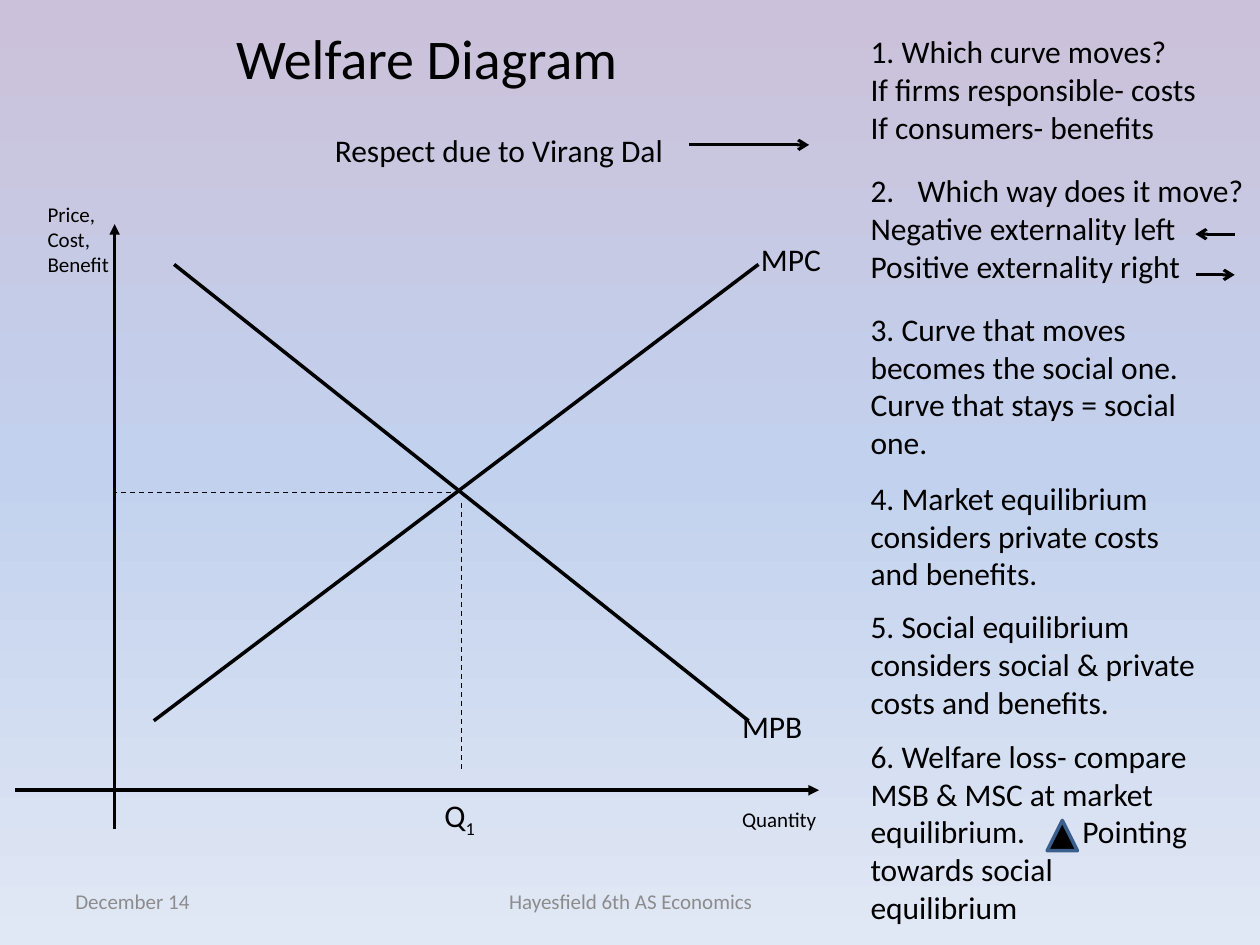
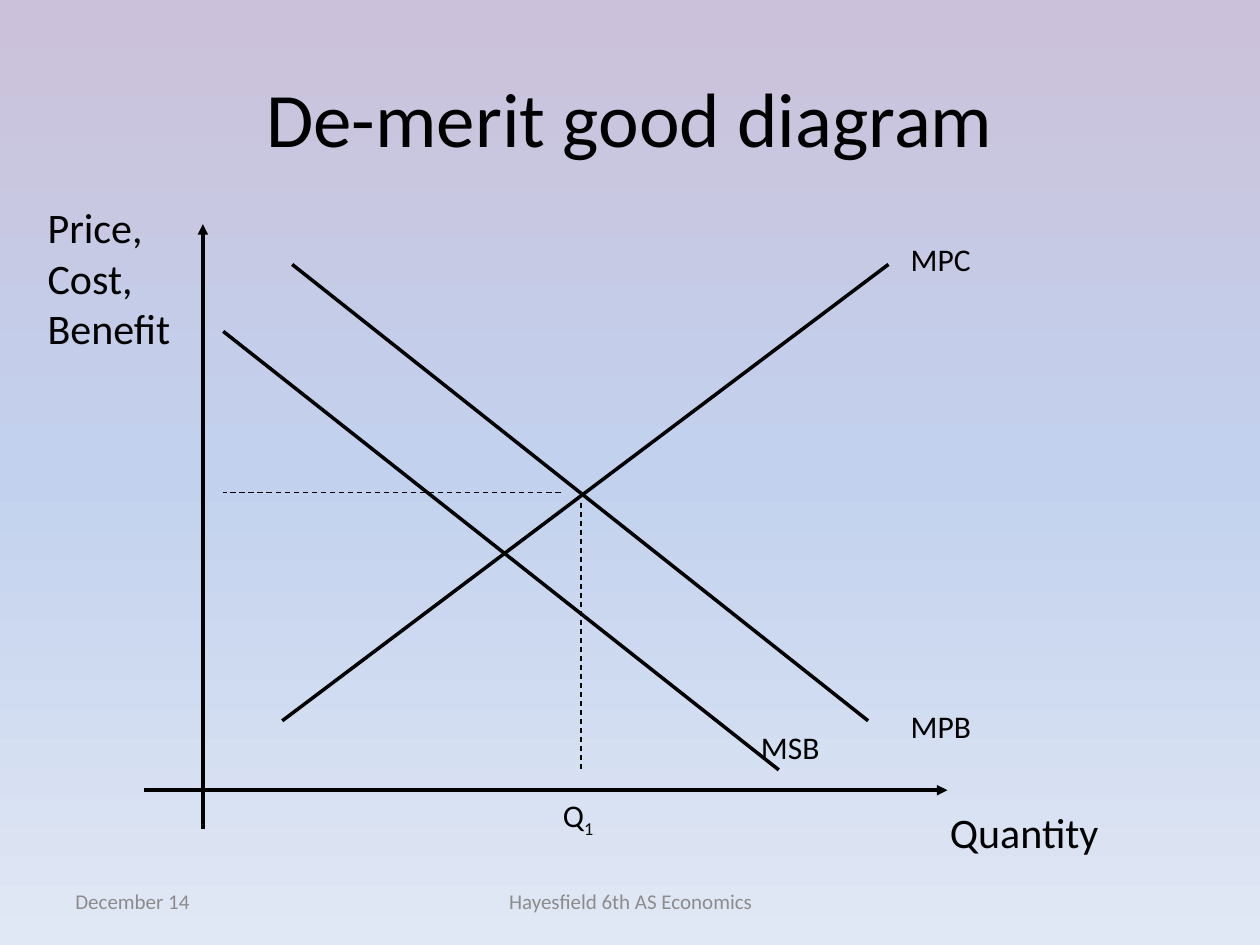
"""Builds two slides on externalities: a welfare diagram with steps and a de-merit good diagram."""
from copy import deepcopy
from dataclasses import dataclass

from lxml.etree import SubElement
from pptx import Presentation
from pptx.dml.color import RGBColor
from pptx.enum.dml import MSO_LINE_DASH_STYLE as Dash
from pptx.enum.shapes import MSO_CONNECTOR as Connector, MSO_SHAPE as Shape
from pptx.enum.text import MSO_ANCHOR as Anchor, MSO_AUTO_SIZE as AutoSize, PP_ALIGN as Align
from pptx.oxml.ns import qn
from pptx.util import Cm, Pt

COLOURS = {
    "ink": "000000",
    "footer": "8C8C8C",
    "triangle_edge": "3A5F8C",
    "sky_top": "CCC1DA",
    "sky_middle": "C2D1ED",
    "sky_bottom": "E1E8F5",
}
FONT = "Calibri"
TITLE_ONLY = 5
CURVE_TOP, CURVE_BOTTOM = 5.33, 14.53
PRICE_LEVEL, GUIDE_TOP, GUIDE_BOTTOM = 9.93, 10.13, 15.52
AXIS_TOP, AXIS_BOTTOM, QUANTITY_AXIS = 4.52, 16.71, 15.93
LABEL_WIDTH, LABEL_HEIGHT = 1.73, 1.02
STEP_LEFT, STEP_WIDTH = 17.3, 7.19

STEPS = [
    (0.53, 2.57, "1. Which curve moves?\nIf firms responsible- costs\nIf consumers- benefits"),
    (6.12, 3.33, "3. Curve that moves becomes the social one.\nCurve that stays = social one."),
    (9.53, 2.57, "4. Market equilibrium considers private costs and benefits."),
    (12.12, 2.57, "5. Social equilibrium considers social & private costs and benefits."),
]
DIRECTIONS = "Which way does it move?\nNegative externality left\nPositive externality right"
WELFARE_LOSS = ("6. Welfare loss- compare MSB & MSC at market equilibrium."
                "\tPointing towards social equilibrium")


@dataclass
class Market:
    """Horizontal places of one supply and demand diagram, in centimetres."""
    price_axis: float
    quantity_axis: tuple
    cost_curve: tuple
    benefit_curve: tuple
    quantity_guide: float
    price_guide: tuple
    cost_label: float
    benefit_label: float
    guide_label: float
    price_box: tuple
    quantity_box: tuple
    axis_size: int


WELFARE = Market(
    price_axis=2.31, quantity_axis=(0.3, 16.51),
    cost_curve=(3.1, 15.29), benefit_curve=(3.51, 15.09),
    quantity_guide=9.3, price_guide=(2.31, 9.09),
    cost_label=15.09, benefit_label=14.71, guide_label=8.71,
    price_box=(0.71, 3.94, 1.8, 1.8), quantity_box=(14.71, 16.13, 2.21, 0.79), axis_size=12)
DEMERIT = Market(
    price_axis=4.09, quantity_axis=(2.9, 19.1),
    cost_curve=(5.69, 17.91), benefit_curve=(5.89, 17.5),
    quantity_guide=11.71, price_guide=(4.5, 11.3),
    cost_label=18.11, benefit_label=18.11, guide_label=11.1,
    price_box=(0.71, 3.94, 3, 3.33), quantity_box=(18.9, 16.13, 3.81, 1.27), axis_size=24)


def colour(name):
    """Return the named colour."""
    return RGBColor.from_string(COLOURS[name])


def style_text(frame, size, ink="ink", align=Align.LEFT):
    """Give every run in a frame the same look."""
    for para in frame.paragraphs:
        para.alignment = align
        for span in para.runs:
            span.font.name = FONT
            span.font.size = Pt(size)
            span.font.color.rgb = colour(ink)


def add_text(page, place, text, size=18, wrap=True, ink="ink", align=Align.LEFT):
    """Add a text box at (left, top, width, height)."""
    box = page.shapes.add_textbox(*map(Cm, place))
    frame = box.text_frame
    frame.word_wrap = wrap
    frame.auto_size = AutoSize.SHAPE_TO_FIT_TEXT
    frame.text = text
    style_text(frame, size, ink, align)
    return box


def add_label(page, left, top, text, width=LABEL_WIDTH):
    """Add a short label on one line."""
    return add_text(page, (left, top, width, LABEL_HEIGHT), text, wrap=False)


def add_line(page, start, end, width=2.0, arrow=None, dashed=False):
    """Draw a straight line, with an arrowhead at its end if asked."""
    line = page.shapes.add_connector(Connector.STRAIGHT, *map(Cm, (*start, *end)))
    line.line.color.rgb = colour("ink")
    line.line.width = Pt(width)
    if dashed:
        line.line.dash_style = Dash.DASH
    if arrow:
        SubElement(line.line._get_or_add_ln(), qn("a:tailEnd"), type=arrow)
    SubElement(line._element.spPr, qn("a:effectLst"))


def add_title(page, text, place, size):
    """Fill and place the title."""
    title = page.shapes.title
    title.left, title.top, title.width, title.height = map(Cm, place)
    title.text_frame.text = text
    title.text_frame.vertical_anchor = Anchor.MIDDLE
    style_text(title.text_frame, size, align=Align.CENTER)


def add_footers(page):
    """Add the date and the course name at the foot."""
    footers = [(1.27, 5.92, "December 14", Align.LEFT),
               (8.69, 8.05, "Hayesfield 6th AS Economics", Align.CENTER)]
    for left, width, text, align in footers:
        box = add_text(page, (left, 17.65, width, 1.02), text, 12, ink="footer", align=align)
        box.text_frame.auto_size = AutoSize.NONE
        box.text_frame.vertical_anchor = Anchor.MIDDLE


def add_market(page, market):
    """Draw the axes, private curves, equilibrium guides and labels."""
    add_line(page, (market.price_axis, AXIS_BOTTOM), (market.price_axis, AXIS_TOP),
             arrow="triangle")
    axis_start, axis_end = market.quantity_axis
    add_line(page, (axis_start, QUANTITY_AXIS), (axis_end, QUANTITY_AXIS), arrow="triangle")
    add_text(page, market.price_box, "Price, Cost, Benefit", market.axis_size)
    add_text(page, market.quantity_box, "Quantity", market.axis_size)

    cost_start, cost_end = market.cost_curve
    add_line(page, (cost_start, CURVE_BOTTOM), (cost_end, CURVE_TOP))
    benefit_start, benefit_end = market.benefit_curve
    add_line(page, (benefit_start, CURVE_TOP), (benefit_end, CURVE_BOTTOM))
    add_label(page, market.cost_label, 4.72, "MPC")
    add_label(page, market.benefit_label, 14.12, "MPB")

    add_line(page, (market.quantity_guide, GUIDE_TOP), (market.quantity_guide, GUIDE_BOTTOM),
             0.75, dashed=True)
    guide_start, guide_end = market.price_guide
    add_line(page, (guide_end, PRICE_LEVEL), (guide_start, PRICE_LEVEL), 0.75, dashed=True)
    frame = add_label(page, market.guide_label, QUANTITY_AXIS, "Q", 1.17).text_frame
    subscript = frame.paragraphs[0].add_run()
    subscript.text = "1"
    style_text(frame, 18)
    subscript._r.get_or_add_rPr().set("baseline", "-25000")


def add_directions(page):
    """Add the second step, with its number and two direction arrows."""
    box = add_text(page, (STEP_LEFT, 3.33, 8.13, 3.33), DIRECTIONS, wrap=False)
    for para in box.text_frame.paragraphs:
        properties = para._p.get_or_add_pPr()
        properties.set("marL", str(Cm(0.95)))
        properties.set("indent", str(-Cm(0.95)))
    first = box.text_frame.paragraphs[0]._p.get_or_add_pPr()
    SubElement(first, qn("a:buFont"), typeface="+mj-lt")
    SubElement(first, qn("a:buAutoNum"), type="arabicPeriod", startAt="2")
    add_line(page, (24.89, 4.72), (24.1, 4.72), 1.75, "arrow")
    add_line(page, (24.1, 5.54), (24.89, 5.54), 1.75, "arrow")


def add_welfare_loss(page):
    """Add the last step, with a triangle in the gap of its text."""
    box = add_text(page, (STEP_LEFT, 14.73, STEP_WIDTH, 4.11), WELFARE_LOSS)
    properties = box.text_frame.paragraphs[0]._p.get_or_add_pPr()
    stops = SubElement(properties, qn("a:tabLst"))
    SubElement(stops, qn("a:tab"), pos=str(Cm(4.27)), algn="l")
    triangle = page.shapes.add_shape(
        Shape.ISOSCELES_TRIANGLE, *map(Cm, (21.11, 16.54, 0.61, 0.61)))
    triangle.shadow.inherit = False
    triangle.fill.solid()
    triangle.fill.fore_color.rgb = colour("ink")
    triangle.line.color.rgb = colour("triangle_edge")
    triangle.line.width = Pt(2)


def set_background(master):
    """Give the master its three-colour vertical gradient."""
    fill = master.background.fill
    fill.gradient()
    fill.gradient_angle = 270
    stops = master._element.find(".//" + qn("a:gsLst"))
    stops.insert(1, deepcopy(stops[0]))
    names = ("sky_top", "sky_middle", "sky_bottom")
    for index, (stop, name) in enumerate(zip(fill.gradient_stops, names)):
        stop.position = index / 2
        stop.color.rgb = colour(name)


def add_page(deck, title, place, size, market):
    """Add a page with a title, footers and a market diagram."""
    page = deck.slides.add_slide(deck.slide_layouts[TITLE_ONLY])
    add_title(page, title, place, size)
    add_footers(page)
    add_market(page, market)
    return page


def main():
    """Build and save the deck."""
    deck = Presentation()
    deck.slide_width, deck.slide_height = Cm(25.4), Cm(19.05)
    set_background(deck.slide_master)

    welfare = add_page(deck, "Welfare Diagram", (1.9, 0.33, 13.41, 1.63), 32, WELFARE)
    for top, height, text in STEPS:
        add_text(welfare, (STEP_LEFT, top, STEP_WIDTH, height), text)
    add_directions(welfare)
    add_welfare_loss(welfare)
    add_text(welfare, (6.5, 2.51, 10.31, LABEL_HEIGHT), "Respect due to Virang Dal")
    add_line(welfare, (13.89, 2.92), (16.31, 2.92), 1.75, "arrow")

    demerit = add_page(deck, "De-merit good diagram", (1.27, 0.76, 22.86, 3.18), 44, DEMERIT)
    add_line(demerit, (4.5, 6.68), (15.7, GUIDE_BOTTOM))
    add_label(demerit, 15.09, 14.55, "MSB")

    deck.save("out.pptx")


if __name__ == "__main__":
    main()
